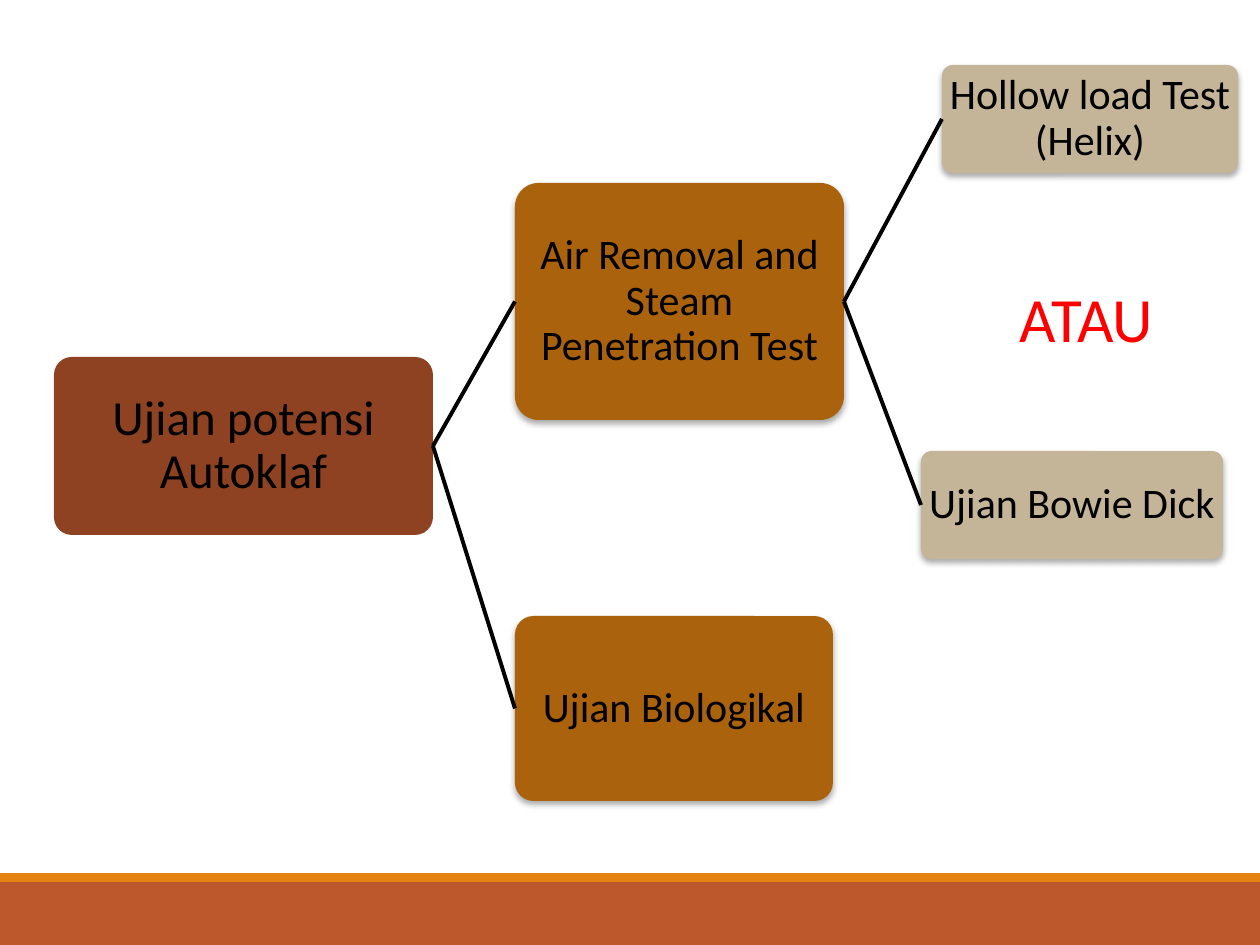
from lxml import etree
from pptx import Presentation, util as u
from pptx.dml.color import RGBColor
from pptx.enum import shapes, text
from pptx.oxml import parse_xml
from pptx.oxml.ns import nsdecls, qn

PX = u.Inches(1) / 126
WIDTH, HEIGHT = 1260, 945
LEFT_SITE, RIGHT_SITE = 1, 3
SHADOW = (
    f'<a:outerShdw {nsdecls("a")} blurRad="44450" dist="27940" dir="5400000" '
    'rotWithShape="0"><a:srgbClr val="000000"><a:alpha val="32000"/>'
    '</a:srgbClr></a:outerShdw>'
)


def px(*lengths):
    return [u.Emu(round(length * PX)) for length in lengths]


def colour(hex_code):
    return RGBColor.from_string(hex_code)


def write(frame, words, size, ink="000000", spacing=1.0, margins=None):
    """Put one centred paragraph into a text frame."""
    frame.word_wrap = True
    frame.vertical_anchor = text.MSO_ANCHOR.MIDDLE
    if margins is not None:
        frame.margin_left, frame.margin_top, frame.margin_right, frame.margin_bottom = px(*[margins] * 4)
    paragraph = frame.paragraphs[0]
    paragraph.alignment = text.PP_ALIGN.CENTER
    paragraph.line_spacing = spacing
    run = paragraph.add_run()
    run.text = words
    run.font.name = "Calibri"
    run.font.size = u.Pt(size)
    run.font.color.rgb = colour(ink)


def add_panel(slide, kind, box, fill):
    panel = slide.shapes.add_shape(kind, *px(*box))
    panel.shadow.inherit = False
    panel.fill.solid()
    panel.fill.fore_color.rgb = colour(fill)
    panel.line.fill.background()
    return panel


def add_footer(slide, box):
    """Place the base band with its thin stripe on top."""
    left, top, width, height = box
    stripe = 9
    rect = shapes.MSO_SHAPE.RECTANGLE
    add_panel(slide, rect, (left, top + stripe, width, height - stripe), "BD582C")
    add_panel(slide, rect, (left, top, width, stripe), "E48312")


def add_node(slide, box, words, fill, size=24, raised=True):
    node = add_panel(slide, shapes.MSO_SHAPE.ROUNDED_RECTANGLE, box, fill)
    node.adjustments[0] = 0.1
    if raised:
        node._element.spPr.find(qn("a:effectLst")).append(parse_xml(SHADOW))
    write(node.text_frame, words, size, spacing=0.9, margins=2)
    return node


def add_branch(slide, parent, child):
    branch = slide.shapes.add_connector(shapes.MSO_CONNECTOR.STRAIGHT, 0, 0, 0, 0)
    branch.begin_connect(parent, RIGHT_SITE)
    branch.end_connect(child, LEFT_SITE)
    branch.line.color.rgb = colour("000000")
    branch.line.width = u.Pt(2.25)
    etree.SubElement(branch._element.spPr, qn("a:effectLst"))


def add_test_tree(slide, box):
    """Place the tree of autoclave tests, from left to right."""
    left, top = box[:2]

    def node(x, y, width, height, *args, **options):
        return add_node(slide, (left + x, top + y, width, height), *args, **options)

    autoclave = node(0, 292, 379, 178, "Ujian potensi Autoklaf", "8E4221", size=28, raised=False)
    penetration = node(461, 118, 329, 237, "Air Removal and Steam Penetration Test", "AB620D")
    biological = node(461, 551, 318, 185, "Ujian Biologikal", "AB620D")
    hollow_load = node(888, 0, 296, 108, "Hollow load Test (Helix)", "C5B598")
    bowie_dick = node(867, 386, 302, 108, "Ujian Bowie Dick", "C5B598")

    for parent, child in (
        (autoclave, penetration),
        (autoclave, biological),
        (penetration, hollow_load),
        (penetration, bowie_dick),
    ):
        add_branch(slide, parent, child)

    alternative = slide.shapes.add_textbox(*px(left + 943, top + 208, 179, 89))
    write(alternative.text_frame, "ATAU", 36, ink="FF0000")


def main():
    deck = Presentation()
    deck.slide_width, deck.slide_height = px(WIDTH, HEIGHT)
    slide = deck.slides.add_slide(deck.slide_layouts[6])
    add_footer(slide, (0, 873, WIDTH, 72))
    add_test_tree(slide, (54, 65, 1184, 736))
    deck.save("out.pptx")


if __name__ == "__main__":
    main()
